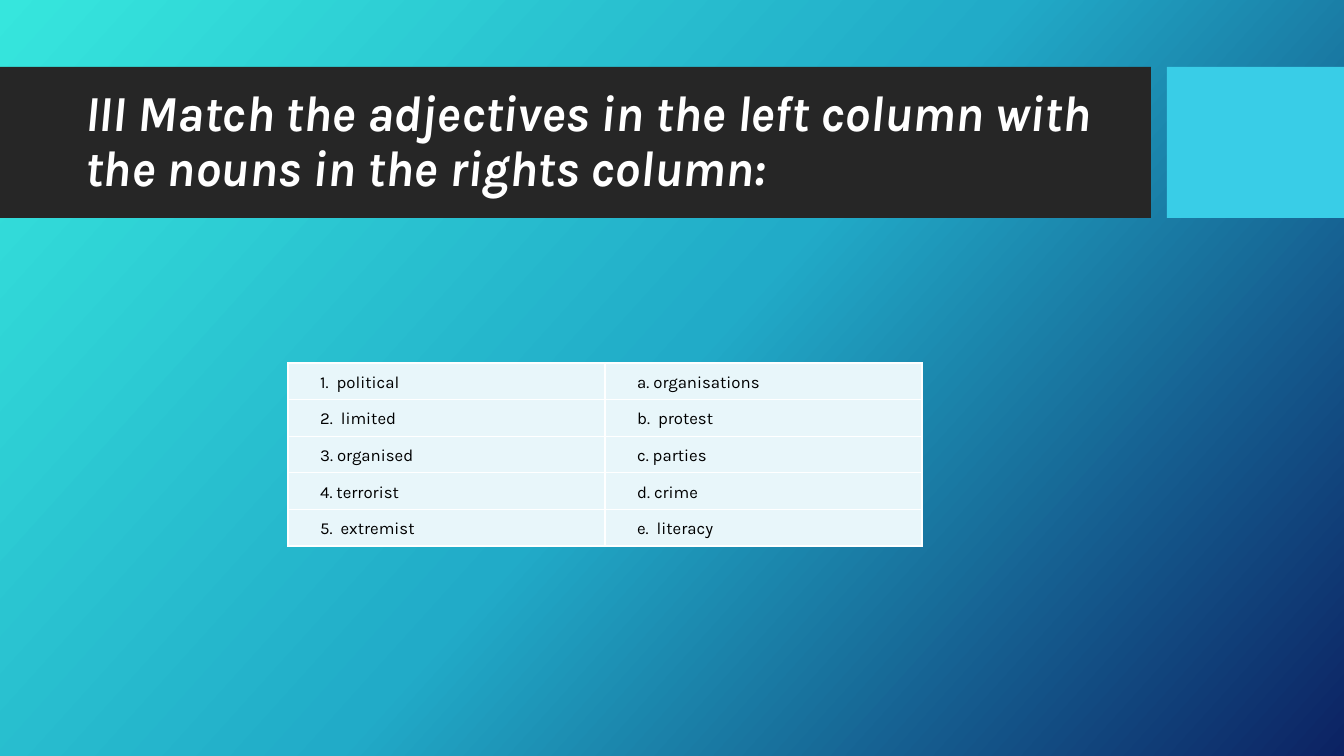
"""Build a slide with an exercise that matches adjectives to nouns."""
from lxml import etree
from pptx import Presentation
from pptx import util as u
from pptx.dml.color import RGBColor
from pptx.enum import shapes, text
from pptx.oxml import parse_xml
from pptx.oxml.ns import nsdecls, qn

PX = 12192000 / 1344


def rgb(value):
    return RGBColor.from_string(value)


def write(tf, words, size, color, spacing, after=0, bold=False, italic=False):
    tf.word_wrap = True
    p = tf.paragraphs[0]
    p.alignment = text.PP_ALIGN.LEFT
    p.line_spacing = spacing
    p.space_after = u.Pt(after)
    r = p.add_run()
    r.text = words
    r.font.name = "Karla"
    r.font.size = u.Pt(size)
    r.font.bold = bold
    r.font.italic = italic
    r.font.color.rgb = rgb(color)
    return p


prs = Presentation()
prs.slide_width, prs.slide_height = int(1344 * PX), int(756 * PX)
s = prs.slides.add_slide(prs.slide_layouts[5])

fill = s.background.fill
fill.gradient()
stops = fill._fill._gradFill.find(qn("a:gsLst"))
for stop in list(stops):
    stops.remove(stop)
for position, color in [(0, "36E6DD"), (50, "21ABC8"), (100, "0C2263")]:
    gs = etree.SubElement(stops, qn("a:gs"), pos=str(position * 1000))
    etree.SubElement(gs, qn("a:srgbClr"), val=color)
fill.gradient_angle = 360 - 42

for left, width, color in [(0, 1151, "262626"), (1167, 177, "39CDE7")]:
    sp = s.shapes.add_shape(shapes.MSO_SHAPE.RECTANGLE, int(left * PX),
                            int(67 * PX), int(width * PX), int(151 * PX))
    sp.shadow.inherit = False
    sp.fill.solid()
    sp.fill.fore_color.rgb = rgb(color)
    sp.line.fill.background()

title = s.shapes.title
title.left, title.top = int(75 * PX), int(83 * PX)
title.width, title.height = int(1059 * PX), int(119 * PX)
title.element.getparent().append(title.element)
tf = title.text_frame
tf.auto_size = text.MSO_AUTO_SIZE.NONE
tf.vertical_anchor = text.MSO_ANCHOR.MIDDLE
write(tf, "III Match the adjectives in the left column with the nouns in the rights column:",
      36, "FFFFFF", 0.9, bold=True, italic=True)

pairs = [
    ("1.  political", "a. organisations"),
    ("2.  limited", "b.  protest"),
    ("3. organised", "c. parties"),
    ("4. terrorist", "d. crime"),
    ("5.  extremist", "e.  literacy"),
]
table = s.shapes.add_table(len(pairs), 2, int(288 * PX), int(363 * PX),
                           int(634 * PX), int(180 * PX)).table
table.first_row = False
table.horz_banding = False
for row, pair in enumerate(pairs):
    for col, words in enumerate(pair):
        cell = table.cell(row, col)
        cell.margin_left = cell.margin_right = int(7 * PX)
        cell.margin_top = cell.margin_bottom = int(7 * PX)
        cell.fill.solid()
        cell.fill.fore_color.rgb = rgb("E8F6FA")
        p = write(cell.text_frame, words, 12, "000000", 1.15, after=8 * col)
        pPr = p._p.get_or_add_pPr()
        pPr.set("marL", str(u.Inches(0.5)))
        pPr.set("indent", str(u.Inches(-0.25)))
        tcPr = cell._tc.get_or_add_tcPr()
        for order, side in enumerate("LRTB"):
            tcPr.insert(order, parse_xml(
                f'<a:ln{side} {nsdecls("a")} w="12700"><a:solidFill>'
                f'<a:srgbClr val="FFFFFF"/></a:solidFill></a:ln{side}>'))

prs.save("out.pptx")
